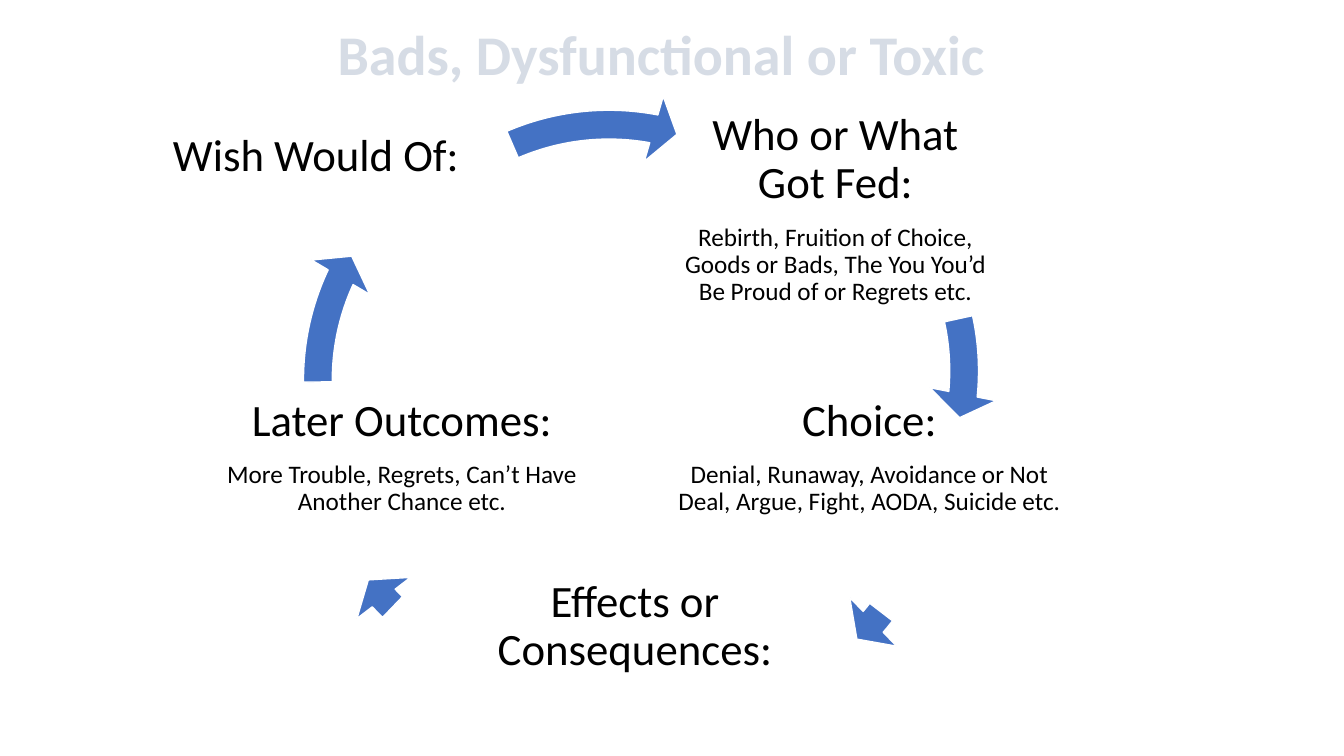
from lxml.etree import SubElement
from pptx import Presentation
from pptx.dml.color import RGBColor
from pptx.enum.dml import MSO_PATTERN
from pptx.enum.shapes import MSO_SHAPE
from pptx.enum.text import MSO_ANCHOR, MSO_AUTO_SIZE, PP_ALIGN
from pptx.oxml import parse_xml
from pptx.oxml.ns import nsdecls, qn
from pptx.util import Cm, Pt

HEAD_SIZE, DETAIL_SIZE, TITLE_SIZE = 32, 18, 40
STAGE_HEIGHT = 3.73
RING_SIZE = 13.97
DEGREE = 0.6

STAGES = [
    (16.94, 3.4, 8.23, "Who or What Got Fed:",
     "Rebirth, Fruition of Choice, Goods or Bads, The You You’d Be Proud of or Regrets etc."),
    (16.92, 9.65, 9.98, "Choice:",
     "Denial, Runaway, Avoidance or Not Deal, Argue, Fight, AODA, Suicide etc."),
    (11.71, 13.94, 8.59, "Effects or Consequences:", None),
    (5.23, 9.65, 9.8, "Later Outcomes:",
     "More Trouble, Regrets, Can’t Have Another Chance etc."),
]
ARROWS = [
    (11.18, 2.36, 347.65, 5.52),
    (10.36, 4.7, 37.56, 40.53),
    (7.16, 3.89, 133.87, 136.84),
    (7.16, 2.59, 179.52, 204.96),
    (8.36, 2.29, 246.69, 280.64),
]


def color(value):
    return RGBColor.from_string(value)


def apply(target, values):
    for name, value in values.items():
        setattr(target, name, value)


class CycleSlide:
    font = "Calibri"
    ink = "000000"
    accent = "4472C4"
    edge = "FFFFFF"

    def __init__(self, deck):
        self.page = deck.slides.add_slide(deck.slide_layouts[6])

    def frame(self, left, top, width, height, **values):
        box = self.page.shapes.add_textbox(Cm(left), Cm(top), Cm(width), Cm(height))
        apply(box.text_frame, {"word_wrap": True, **values})
        return box.text_frame

    def add_text(self, para, text, size, bold=False, **values):
        apply(para, values)
        span = para.add_run()
        span.text = text
        apply(span.font, {"name": self.font, "size": Pt(size), "bold": bold})
        span.font.color.rgb = color(self.ink)
        return span

    def stage(self, left, top, width, heading, detail):
        inset = Cm(0.1)
        frame = self.frame(left, top, width, STAGE_HEIGHT,
                           vertical_anchor=MSO_ANCHOR.MIDDLE,
                           margin_left=inset, margin_right=inset,
                           margin_top=inset, margin_bottom=inset)
        para = frame.paragraphs[0]
        for text, size in ((heading, HEAD_SIZE), (detail, DETAIL_SIZE)):
            if text:
                para = frame.add_paragraph() if para.runs else para
                self.add_text(para, text, size, alignment=PP_ALIGN.CENTER,
                              line_spacing=0.9)
                spacing = SubElement(para._p.get_or_add_pPr(), qn("a:spcAft"))
                SubElement(spacing, qn("a:spcPct")).set("val", "35000")

    def arrow(self, left, top, start, end):
        ring = self.page.shapes.add_shape(
            MSO_SHAPE.CIRCULAR_ARROW, Cm(left), Cm(top), Cm(RING_SIZE), Cm(RING_SIZE))
        ring.shadow.inherit = False
        ring.fill.solid()
        ring.fill.fore_color.rgb = color(self.accent)
        ring.line.color.rgb = color(self.edge)
        ring.line.width = Pt(1)
        settings = (0.052, 5.6 * DEGREE, end * DEGREE, start * DEGREE, 0.061)
        for index, value in enumerate(settings):
            ring.adjustments[index] = value

    def label(self, left, top, width, height, text):
        frame = self.frame(left, top, width, height,
                           auto_size=MSO_AUTO_SIZE.SHAPE_TO_FIT_TEXT)
        return self.add_text(frame.paragraphs[0], text, HEAD_SIZE)

    def title(self, left, top, width, height, text):
        frame = self.frame(left, top, width, height,
                           auto_size=MSO_AUTO_SIZE.SHAPE_TO_FIT_TEXT)
        span = self.add_text(frame.paragraphs[0], text, TITLE_SIZE, bold=True,
                             alignment=PP_ALIGN.CENTER)
        fill = span.font.fill
        fill.patterned()
        fill.pattern = MSO_PATTERN.DARK_UPWARD_DIAGONAL
        fill.fore_color.rgb = color("44546A")
        fill.back_color.rgb = color("D6DCE5")
        span._r.get_or_add_rPr().insert(0, parse_xml(
            f'<a:ln {nsdecls("a")} w="12700"><a:solidFill>'
            '<a:srgbClr val="333F50"/></a:solidFill></a:ln>'))


def main():
    deck = Presentation()
    apply(deck, {"slide_width": Cm(33.87), "slide_height": Cm(19.05)})
    cycle = CycleSlide(deck)
    for stage in STAGES:
        cycle.stage(*stage)
    for arrow in ARROWS:
        cycle.arrow(*arrow)
    cycle.label(4.11, 3.07, 10.54, 1.63, "Wish Would Of:")
    cycle.title(8.2, 0.38, 16.92, 1.96, "Bads, Dysfunctional or Toxic")
    deck.save("out.pptx")


if __name__ == "__main__":
    main()
